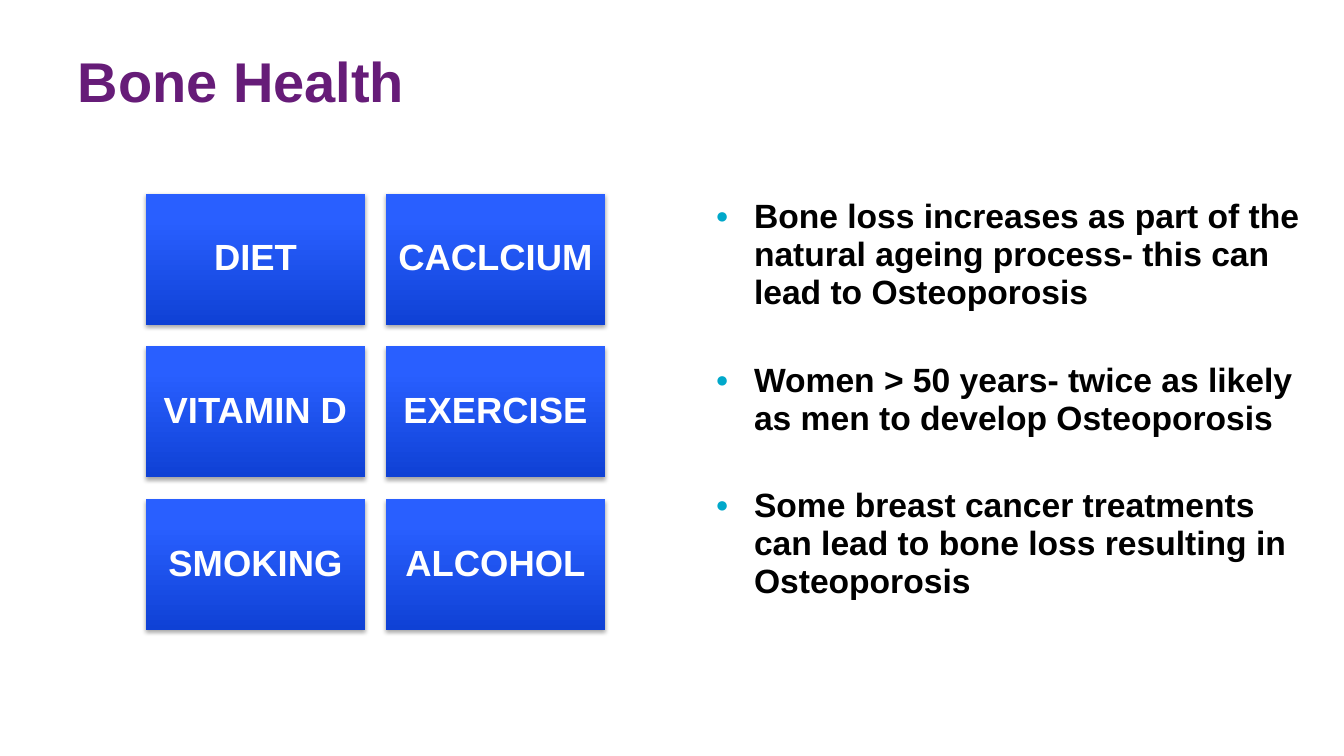
from dataclasses import dataclass

from lxml.etree import SubElement
from pptx import Presentation
from pptx.dml.color import RGBColor
from pptx.enum.shapes import MSO_SHAPE
from pptx.enum.text import MSO_ANCHOR, PP_ALIGN
from pptx.oxml.ns import qn
from pptx.util import Inches, Pt


@dataclass(frozen=True)
class Theme:
    """Colours and type sizes of the slide."""
    font: str = "Arial"
    title: str = "661C78"
    title_shadow: str = "808080"
    body: str = "000000"
    bullet: str = "00A8CA"
    tile_text: str = "FFFFFF"
    tile_bottom: str = "0F41D5"
    tile_top: str = "295FFF"
    tile_shadow: str = "000000"
    title_size: int = 40
    body_size: int = 24
    tile_size: int = 26


THEME = Theme()
FACTORS = ["DIET", "CACLCIUM", "VITAMIN D", "EXERCISE", "SMOKING", "ALCOHOL"]
FACTS = [
    "Bone loss increases as part of the natural ageing process- this can lead to Osteoporosis",
    "Women > 50 years- twice as likely as men to develop Osteoporosis",
    "Some breast cancer treatments can lead to bone loss resulting in Osteoporosis",
]


def apply_format(target, values):
    """Set every attribute in values on target."""
    for name, value in values.items():
        setattr(target, name, value)


def style_font(font, size, color):
    """Give a font the bold theme face, a size and a colour."""
    apply_format(font, {"name": THEME.font, "size": Pt(size), "bold": True})
    font.color.rgb = RGBColor.from_string(color)


def add_shadow(effects, color, blur, distance, angle, opacity):
    """Append an outer shadow to an effect list."""
    shadow = SubElement(effects, qn("a:outerShdw"), {
        "blurRad": str(Pt(blur)), "dist": str(Pt(distance)),
        "dir": str(angle * 60000), "algn": "tl", "rotWithShape": "0"})
    shade = SubElement(shadow, qn("a:srgbClr"), val=color)
    SubElement(shade, qn("a:alpha"), val=str(opacity * 1000))


def set_title(slide, text):
    """Place and format the title with its text shadow."""
    title = slide.shapes.title
    apply_format(title, {"left": Inches(0.67), "top": Inches(0.17),
                         "width": Inches(11.33), "height": Inches(1.25)})
    title.text_frame.vertical_anchor = MSO_ANCHOR.MIDDLE
    paragraph = title.text_frame.paragraphs[0]
    paragraph.alignment = PP_ALIGN.LEFT
    run = paragraph.add_run()
    run.text = text
    style_font(run.font, THEME.title_size, THEME.title)
    properties = run.font._element
    effects = SubElement(properties, qn("a:effectLst"))
    properties.find(qn("a:latin")).addprevious(effects)
    add_shadow(effects, THEME.title_shadow, 0, 2, 45, 100)


def add_tile(slide, text, left, top):
    """Add one gradient tile with a centred label."""
    tile = slide.shapes.add_shape(
        MSO_SHAPE.RECTANGLE, Inches(left), Inches(top), Inches(2.17), Inches(1.3))
    tile.fill.gradient()
    tile.fill.gradient_angle = 90
    stops = [(0, THEME.tile_bottom), (0.8, THEME.tile_top)]
    for stop, (position, color) in zip(tile.fill.gradient_stops, stops):
        stop.position = position
        stop.color.rgb = RGBColor.from_string(color)
    tile.line.fill.background()
    tile.shadow.inherit = False
    effects = tile._element.spPr.find(qn("a:effectLst"))
    add_shadow(effects, THEME.tile_shadow, 3.1, 1.8, 90, 35)
    margins = dict.fromkeys(
        ["margin_left", "margin_top", "margin_right", "margin_bottom"], Inches(0.11))
    apply_format(tile.text_frame, {
        "word_wrap": True, "vertical_anchor": MSO_ANCHOR.MIDDLE, **margins})
    paragraph = tile.text_frame.paragraphs[0]
    paragraph.text = text
    apply_format(paragraph, {"alignment": PP_ALIGN.CENTER, "line_spacing": 0.9})
    style_font(paragraph.font, THEME.tile_size, THEME.tile_text)


def add_bullet(paragraph):
    """Give a paragraph a hanging round bullet."""
    properties = paragraph._p.get_or_add_pPr()
    properties.set("marL", str(Inches(0.38)))
    properties.set("indent", str(-Inches(0.38)))
    color = SubElement(properties, qn("a:buClr"))
    SubElement(color, qn("a:srgbClr"), val=THEME.bullet)
    SubElement(properties, qn("a:buSzPct"), val="65000")
    SubElement(properties, qn("a:buFont"), typeface=THEME.font)
    SubElement(properties, qn("a:buChar"), char="●")


def add_facts(slide, facts):
    """Add the bulleted facts beside the tiles."""
    box = slide.shapes.add_textbox(
        Inches(7), Inches(1.92), Inches(6.11), Inches(4.33))
    frame = box.text_frame
    frame.word_wrap = True
    for index, fact in enumerate(facts):
        paragraph = frame.add_paragraph() if index else frame.paragraphs[0]
        paragraph.text = fact
        add_bullet(paragraph)
        apply_format(paragraph, {"line_spacing": 0.94,
                                 "space_before": Pt(35.5 if index else 0)})
        style_font(paragraph.font, THEME.body_size, THEME.body)


def main():
    """Build and save the bone health slide."""
    presentation = Presentation()
    apply_format(presentation, {"slide_width": Inches(13.33),
                                "slide_height": Inches(7.5)})
    slide = presentation.slides.add_slide(presentation.slide_layouts[5])
    set_title(slide, "Bone Health")
    add_facts(slide, FACTS)
    for index, factor in enumerate(FACTORS):
        row, column = divmod(index, 2)
        add_tile(slide, factor, 1.45 + 2.38 * column, 1.92 + 1.515 * row)
    presentation.save("out.pptx")


if __name__ == "__main__":
    main()
